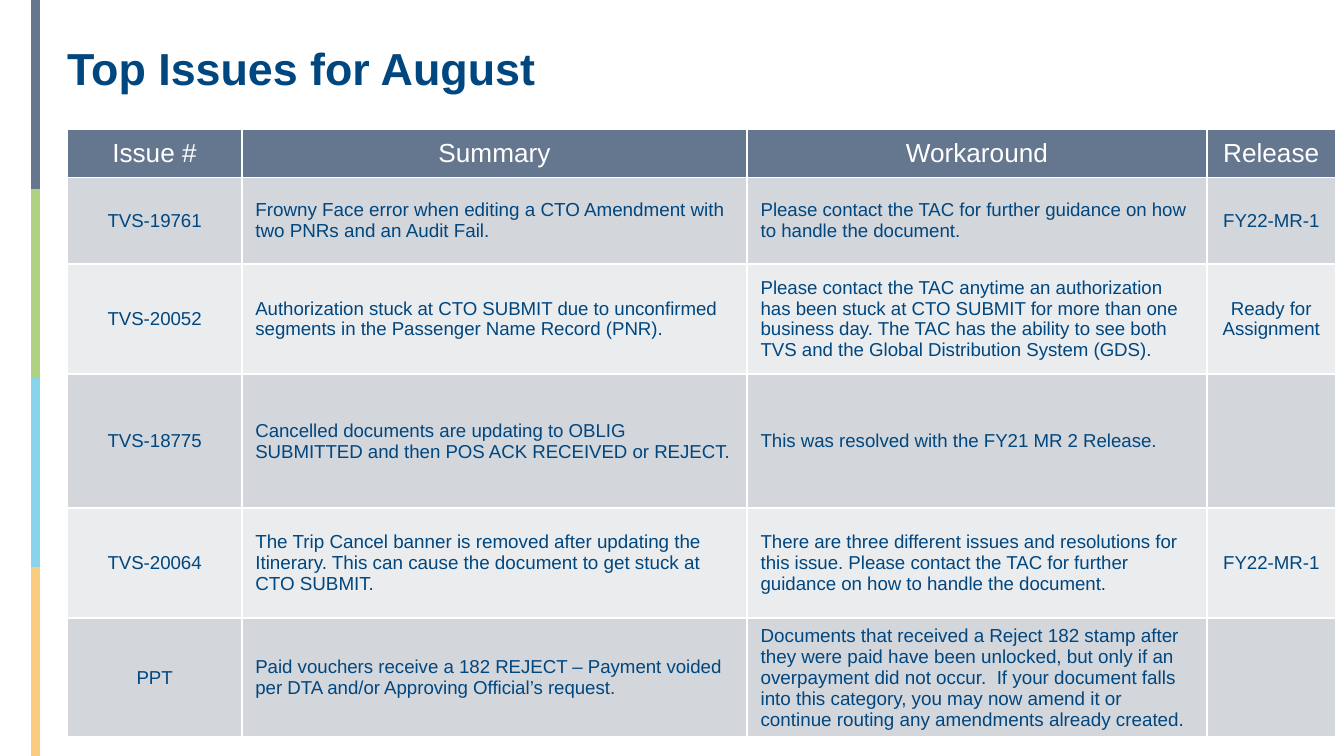
from lxml import etree
from pptx import Presentation
from pptx.dml.color import RGBColor
from pptx.enum import shapes, text
from pptx.oxml import ns
from pptx.util import Pt

NAVY, SLATE, WHITE = "00467F", "65778F", "FFFFFF"
BANDS = ("D3D6DB", "EAECEE")
STRIPES = (SLATE, "AED182", "8AD3ED", "FACC80")
PAGE_WIDTH, PAGE_HEIGHT = 720, 405

TITLE = "Top Issues for August"
HEADERS = ("Issue #", "Summary", "Workaround", "Release")
ISSUES = [
    ("TVS-19761",
     "Frowny Face error when editing a CTO Amendment with two PNRs and an Audit Fail.",
     "Please contact the TAC for further guidance on how to handle the document.",
     "FY22-MR-1"),
    ("TVS-20052",
     "Authorization stuck at CTO SUBMIT due to unconfirmed segments in the "
     "Passenger Name Record (PNR).",
     "Please contact the TAC anytime an authorization has been stuck at CTO SUBMIT "
     "for more than one business day. The TAC has the ability to see both TVS and "
     "the Global Distribution System (GDS).",
     "Ready for Assignment"),
    ("TVS-18775",
     "Cancelled documents are updating to OBLIG SUBMITTED and then POS ACK RECEIVED or REJECT.",
     "This was resolved with the FY21 MR 2 Release.",
     ""),
    ("TVS-20064",
     "The Trip Cancel banner is removed after updating the Itinerary. This can cause "
     "the document to get stuck at CTO SUBMIT.",
     "There are three different issues and resolutions for this issue. Please contact "
     "the TAC for further guidance on how to handle the document.",
     "FY22-MR-1"),
    ("PPT",
     "Paid vouchers receive a 182 REJECT – Payment voided per DTA and/or Approving "
     "Official’s request.",
     "Documents that received a Reject 182 stamp after they were paid have been unlocked, "
     "but only if an overpayment did not occur.  If your document falls into this "
     "category, you may now amend it or continue routing any amendments already created.",
     ""),
]
LARGER_CELLS = {(1, 1), (4, 1), (5, 2)}  # (row, column) set at 10.1 pt
COLUMN_WIDTHS = (93.6, 270.7, 246.2, 69.1)
ROW_HEIGHTS = (26, 46.5, 59, 71.8, 59, 46)
TABLE_LEFT, TABLE_TOP = 36, 69


def color(value):
    return RGBColor.from_string(value)


def write(frame, words, size=10, fill=NAVY, bold=False, align=text.PP_ALIGN.LEFT):
    para = frame.paragraphs[0]
    para.alignment = align
    span = para.add_run()
    span.text = words
    span.font.name = "Arial"
    span.font.size = Pt(size)
    span.font.bold = bold
    span.font.color.rgb = color(fill)


def add_stripe(page, top, bottom, fill):
    x = Pt(19.2)
    stripe = page.shapes.add_connector(shapes.MSO_CONNECTOR.STRAIGHT, x, Pt(top), x, Pt(bottom))
    stripe.line.color.rgb = color(fill)
    stripe.line.width = Pt(5)
    etree.SubElement(stripe._element.spPr, ns.qn("a:effectLst"))


def set_borders(cell, fill, width):
    properties = cell._tc.get_or_add_tcPr()
    for index, side in enumerate(("lnL", "lnR", "lnT", "lnB")):
        line = etree.Element(ns.qn("a:" + side), w=str(Pt(width)))
        solid = etree.SubElement(line, ns.qn("a:solidFill"))
        etree.SubElement(solid, ns.qn("a:srgbClr"), val=fill)
        properties.insert(index, line)


def add_issue_table(page):
    rows = [HEADERS] + ISSUES
    table = page.shapes.add_table(
        len(rows), len(HEADERS), Pt(TABLE_LEFT), Pt(TABLE_TOP),
        Pt(sum(COLUMN_WIDTHS)), Pt(sum(ROW_HEIGHTS))).table
    for column, width in zip(table.columns, COLUMN_WIDTHS):
        column.width = Pt(width)
    for r, (row, height) in enumerate(zip(rows, ROW_HEIGHTS)):
        table.rows[r].height = Pt(height)
        header = r == 0
        for c, words in enumerate(row):
            cell = table.cell(r, c)
            cell.vertical_anchor = text.MSO_ANCHOR.MIDDLE
            cell.fill.solid()
            cell.fill.fore_color.rgb = color(SLATE if header else BANDS[(r - 1) % 2])
            set_borders(cell, WHITE, 1)
            centred = header or c in (0, 3)
            body_size = 10.1 if (r, c) in LARGER_CELLS else 10
            if words:
                write(cell.text_frame, words, size=14 if header else body_size,
                      fill=WHITE if header else NAVY,
                      align=text.PP_ALIGN.CENTER if centred else text.PP_ALIGN.LEFT)


def add_title(page):
    box = page.shapes.title
    box.left, box.top, box.width, box.height = Pt(36), Pt(21.6), Pt(657.4), Pt(39.6)
    frame = box.text_frame
    frame.margin_left = frame.margin_right = frame.margin_top = frame.margin_bottom = 0
    frame.auto_size = text.MSO_AUTO_SIZE.NONE
    frame.vertical_anchor = text.MSO_ANCHOR.TOP
    write(frame, TITLE, size=24, bold=True)


def main():
    deck = Presentation()
    deck.slide_width, deck.slide_height = Pt(PAGE_WIDTH), Pt(PAGE_HEIGHT)
    page = deck.slides.add_slide(deck.slide_layouts.get_by_name("Title Only"))
    step = PAGE_HEIGHT / len(STRIPES)
    for index, fill in enumerate(STRIPES):
        add_stripe(page, index * step, (index + 1) * step, fill)
    add_title(page)
    add_issue_table(page)
    deck.save("out.pptx")


if __name__ == "__main__":
    main()
